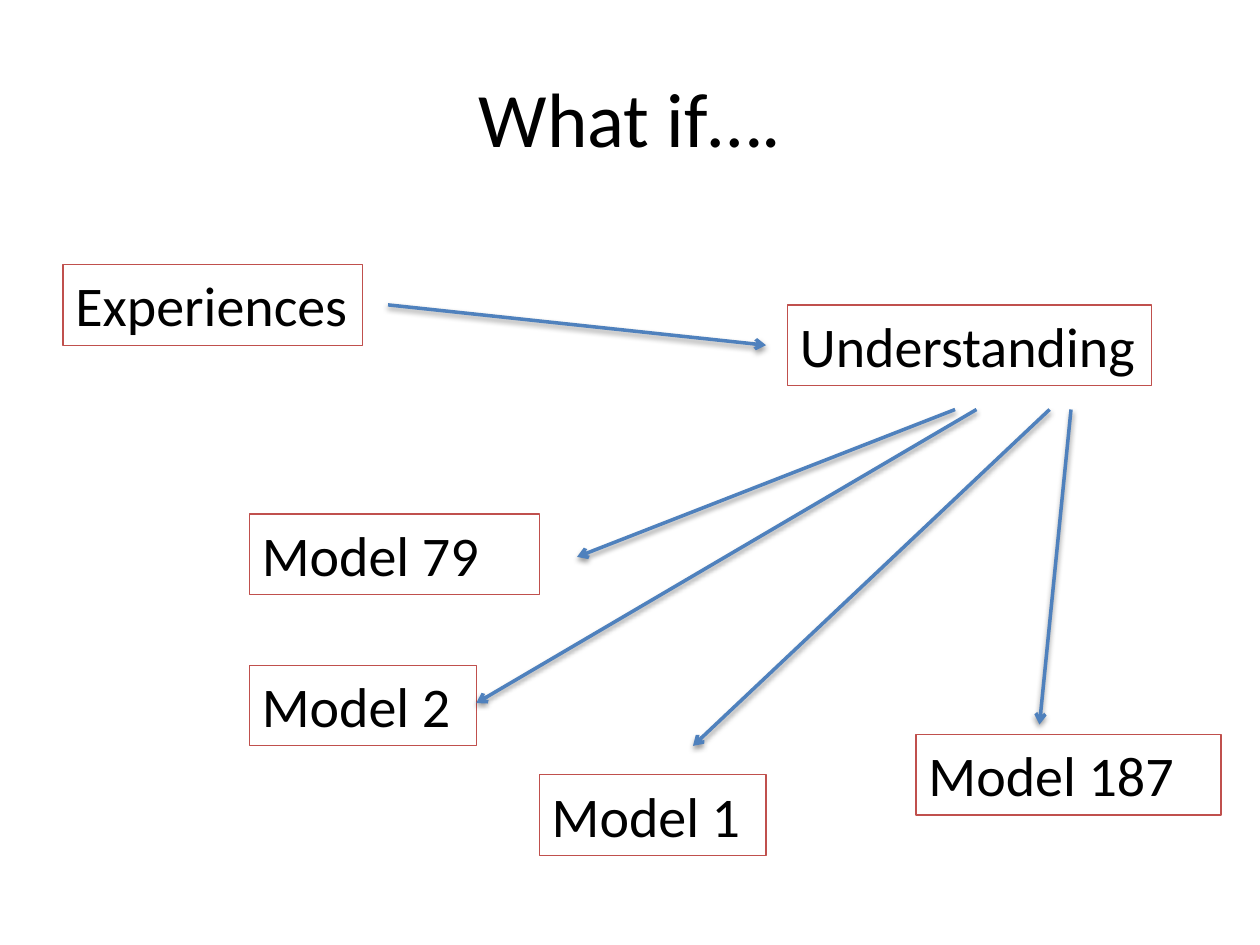
from lxml.etree import SubElement
from pptx import Presentation
from pptx.dml.color import RGBColor
from pptx.enum.shapes import MSO_CONNECTOR
from pptx.enum.text import MSO_ANCHOR, MSO_AUTO_SIZE, PP_ALIGN
from pptx.oxml.ns import qn
from pptx.util import Inches, Pt


def rgb(hex_color):
    return RGBColor.from_string(hex_color)


class Diagram:
    FONT = "Calibri"
    TEXT, BORDER, ARROW, SHADOW = "000000", "C0504D", "4F81BD", "000000"
    BOX_HEIGHT = 0.64

    def __init__(self, slide):
        self.slide = slide

    def style(self, paragraph, size):
        for run in paragraph.runs:
            run.font.name = self.FONT
            run.font.size = Pt(size)
            run.font.color.rgb = rgb(self.TEXT)

    def title(self, text):
        heading = self.slide.shapes.title
        heading.left, heading.top = Inches(0.5), Inches(0.3)
        heading.width, heading.height = Inches(9), Inches(1.25)
        frame = heading.text_frame
        frame.text = text
        frame.vertical_anchor = MSO_ANCHOR.MIDDLE
        frame.paragraphs[0].alignment = PP_ALIGN.CENTER
        self.style(frame.paragraphs[0], 44)

    def box(self, text, left, top, width):
        label = self.slide.shapes.add_textbox(
            Inches(left), Inches(top), Inches(width), Inches(self.BOX_HEIGHT))
        label.line.color.rgb = rgb(self.BORDER)
        label.line.width = Pt(0.75)
        frame = label.text_frame
        frame.text = text
        frame.word_wrap = True
        frame.auto_size = MSO_AUTO_SIZE.SHAPE_TO_FIT_TEXT
        self.style(frame.paragraphs[0], 32)

    def arrow(self, start, end):
        link = self.slide.shapes.add_connector(
            MSO_CONNECTOR.STRAIGHT, *map(Inches, start + end))
        link.line.color.rgb = rgb(self.ARROW)
        link.line.width = Pt(2)
        # Open arrowhead and soft shadow below the line
        properties = link._element.spPr
        SubElement(properties.find(qn("a:ln")), qn("a:tailEnd"), type="arrow")
        effects = SubElement(properties, qn("a:effectLst"))
        shadow = SubElement(effects, qn("a:outerShdw"), blurRad=str(Pt(3.1)),
                            dist=str(Pt(1.6)), dir="5400000", rotWithShape="0")
        color = SubElement(shadow, qn("a:srgbClr"), val=self.SHADOW)
        SubElement(color, qn("a:alpha"), val="38000")


def main():
    deck = Presentation()
    deck.slide_width, deck.slide_height = Inches(10), Inches(7.5)
    title_only = deck.slide_layouts[5]
    diagram = Diagram(deck.slides.add_slide(title_only))
    diagram.title("What if….")

    # Concepts and the models that follow: text, left, top, width
    for concept in [
        ("Experiences", 0.5, 2.1, 2.38),
        ("Understanding", 6.25, 2.42, 2.89),
        ("Model 79", 1.98, 4.08, 2.3),
        ("Model 2", 1.98, 5.28, 1.8),
        ("Model 1", 4.28, 6.15, 1.8),
        ("Model 187", 7.27, 5.83, 2.42),
    ]:
        diagram.box(*concept)

    # Experiences lead to understanding
    diagram.arrow((3.08, 2.42), (6.08, 2.74))

    # Understanding fans out to the models
    fan_top = 3.25
    for fan_x, model_end in [
        (7.58, (4.58, 4.42)),
        (7.75, (3.78, 5.58)),
        (8.33, (5.5, 5.92)),
        (8.5, (8.25, 5.75)),
    ]:
        diagram.arrow((fan_x, fan_top), model_end)

    deck.save("out.pptx")


if __name__ == "__main__":
    main()
